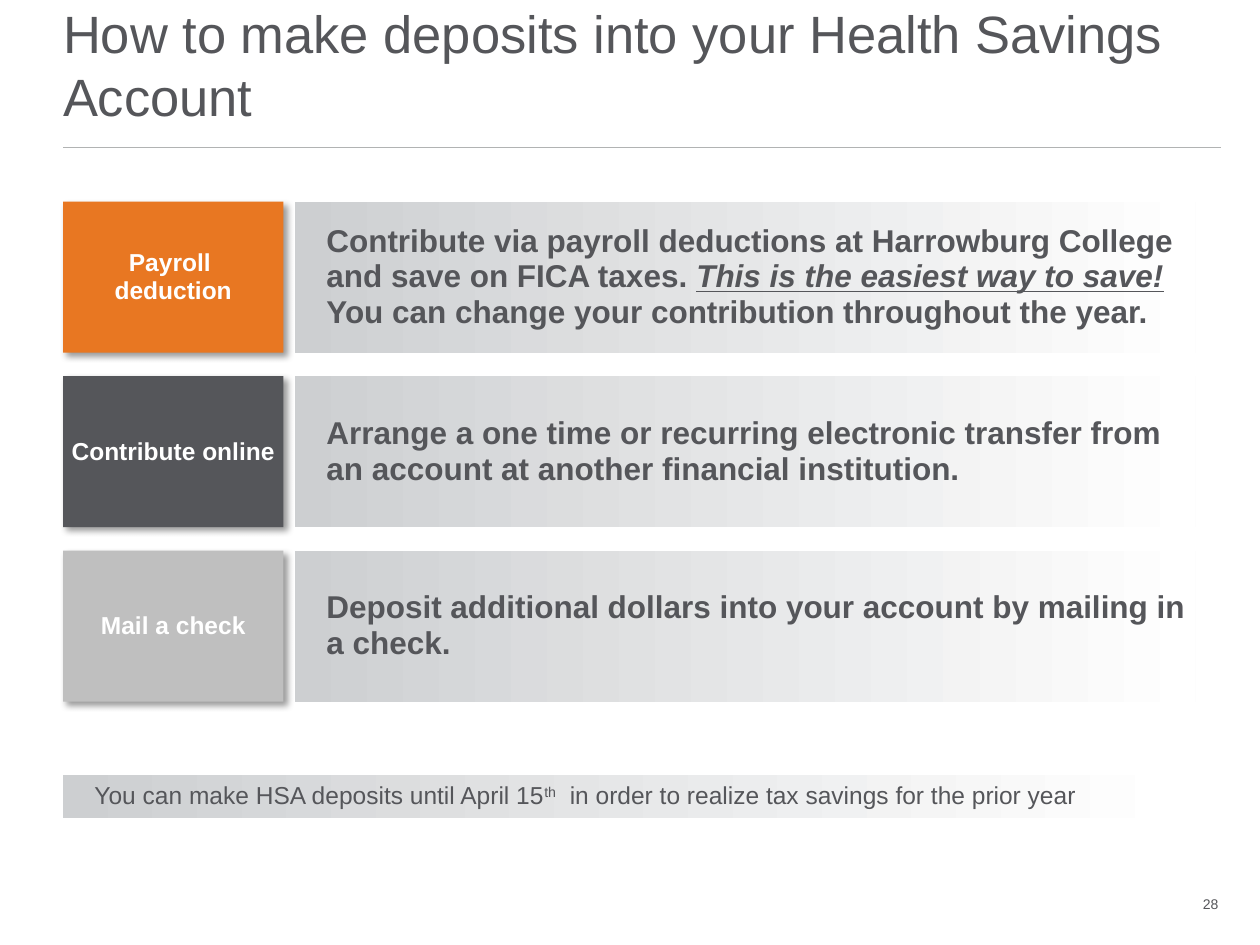
from lxml import etree
from pptx import Presentation
from pptx import util as u
from pptx.dml.color import RGBColor
from pptx.enum import shapes, text
from pptx.oxml import ns

Inches, Pt = u.Inches, u.Pt

GRAY = RGBColor(0x55, 0x56, 0x5A)
ORANGE = RGBColor(0xE8, 0x77, 0x22)
SILVER = RGBColor(0xBF, 0xBF, 0xBF)
RULE = RGBColor(0xB1, 0xB3, 0xB3)
BAND_START = RGBColor(0xCD, 0xCF, 0xD1)
WHITE = RGBColor(0xFF, 0xFF, 0xFF)

LEFT = 0.5
ROW_TOP, ROW_PITCH, ROW_HEIGHT = 1.6, 1.385, 1.2
LABEL_WIDTH = 1.75
BAND_LEFT, BAND_WIDTH = 2.34, 7.15

# Each row: label colour, label lines, description runs with their styles
ROWS = [
    (ORANGE, ["Payroll ", "deduction"], [
        ("Contribute via payroll deductions at Harrowburg College and save on FICA taxes. ", {}),
        ("This is the easiest way to save!", {"italic": True, "underline": True}),
        (" You can change your contribution throughout the year.", {}),
    ]),
    (GRAY, ["Contribute online"], [
        ("Arrange a one time or recurring electronic transfer from an account "
         "at another financial institution.", {}),
    ]),
    (SILVER, ["Mail a check"], [
        ("Deposit additional dollars into your account by mailing in a check.", {}),
    ]),
]


class SlideBuilder:
    font = "Arial"

    def __init__(self, slide):
        self.slide = slide

    def add_run(self, paragraph, words, size, color=GRAY, bold=False,
                italic=False, underline=False, superscript=False):
        run = paragraph.add_run()
        run.text = words
        font = run.font
        font.name, font.size, font.bold = self.font, Pt(size), bold
        font.italic, font.underline = italic, underline
        font.color.rgb = color
        if superscript:
            run._r.get_or_add_rPr().set("baseline", "30000")

    def prepare_text(self, shape, align, anchor, insets=(0, 0, 0, 0), wrap=True):
        """Set up the text frame and return its first paragraph."""
        frame = shape.text_frame
        frame.word_wrap, frame.vertical_anchor = wrap, anchor
        (frame.margin_left, frame.margin_top,
         frame.margin_right, frame.margin_bottom) = map(Inches, insets)
        paragraph = frame.paragraphs[0]
        paragraph.alignment = align
        return paragraph

    def text_box(self, box, words, size, align, anchor, wrap=True):
        shape = self.slide.shapes.add_textbox(*map(Inches, box))
        paragraph = self.prepare_text(shape, align, anchor, wrap=wrap)
        self.add_run(paragraph, words, size)

    def rectangle(self, box):
        shape = self.slide.shapes.add_shape(
            shapes.MSO_SHAPE.RECTANGLE, *map(Inches, box))
        shape.shadow.inherit = False
        shape.line.fill.background()
        return shape

    def band(self, box, runs, size, bold=False):
        """Add a bar that fades to white, with left-aligned text."""
        shape = self.rectangle(box)
        shape.fill.gradient()
        shape.fill.gradient_angle = 0
        for stop, color in zip(shape.fill.gradient_stops, (BAND_START, WHITE)):
            stop.color.rgb = color
        paragraph = self.prepare_text(shape, text.PP_ALIGN.LEFT, text.MSO_ANCHOR.MIDDLE,
                                      insets=(0.25, 0.1, 0, 0.1))
        paragraph.line_spacing = 0.95
        for words, style in runs:
            self.add_run(paragraph, words, size, bold=bold, **style)

    def label(self, box, color, lines):
        shape = self.rectangle(box)
        shape.fill.solid()
        shape.fill.fore_color.rgb = color
        self.drop_shadow(shape)
        paragraph = self.prepare_text(shape, text.PP_ALIGN.CENTER, text.MSO_ANCHOR.MIDDLE)
        paragraph.line_spacing = 0.95
        for index, words in enumerate(lines):
            if index:
                paragraph.add_line_break()
            self.add_run(paragraph, words, 14, WHITE, bold=True)

    def drop_shadow(self, shape):
        effects = shape._element.spPr.find(ns.qn("a:effectLst"))
        shadow = etree.SubElement(effects, ns.qn("a:outerShdw"), blurRad=str(Pt(4)),
                                  dist=str(Pt(3)), dir="2700000", algn="tl",
                                  rotWithShape="0")
        color = etree.SubElement(shadow, ns.qn("a:srgbClr"), val="000000")
        etree.SubElement(color, ns.qn("a:alpha"), val="40000")

    def rule(self, left, right, top):
        line = self.slide.shapes.add_connector(
            shapes.MSO_CONNECTOR.STRAIGHT, *map(Inches, (left, top, right, top)))
        line.line.color.rgb = RULE
        line.line.width = Pt(1)
        etree.SubElement(line._element.spPr, ns.qn("a:effectLst"))


def main():
    presentation = Presentation()
    presentation.slide_width, presentation.slide_height = Inches(10), Inches(7.5)
    builder = SlideBuilder(presentation.slides.add_slide(presentation.slide_layouts[6]))

    builder.rule(LEFT, 9.69, 1.17)
    builder.text_box((9.25, 7.04, 0.42, 0.27), "28", 8,
                     text.PP_ALIGN.RIGHT, text.MSO_ANCHOR.MIDDLE, wrap=False)
    builder.text_box((LEFT, 0.33, 9.18, 0.68),
                     "How to make deposits into your Health Savings Account", 30,
                     text.PP_ALIGN.LEFT, text.MSO_ANCHOR.BOTTOM)

    for index, (color, lines, runs) in enumerate(ROWS):
        top = ROW_TOP + index * ROW_PITCH
        builder.band((BAND_LEFT, top, BAND_WIDTH, ROW_HEIGHT), runs, 18, bold=True)
        builder.label((LEFT, top, LABEL_WIDTH, ROW_HEIGHT), color, lines)

    builder.band((LEFT, 6.15, 8.86, 0.34), [
        ("You can make HSA deposits until April 15", {}),
        ("th", {"superscript": True}),
        ("  in order to realize tax savings for the prior year", {}),
    ], 14)

    presentation.save("out.pptx")


if __name__ == "__main__":
    main()
